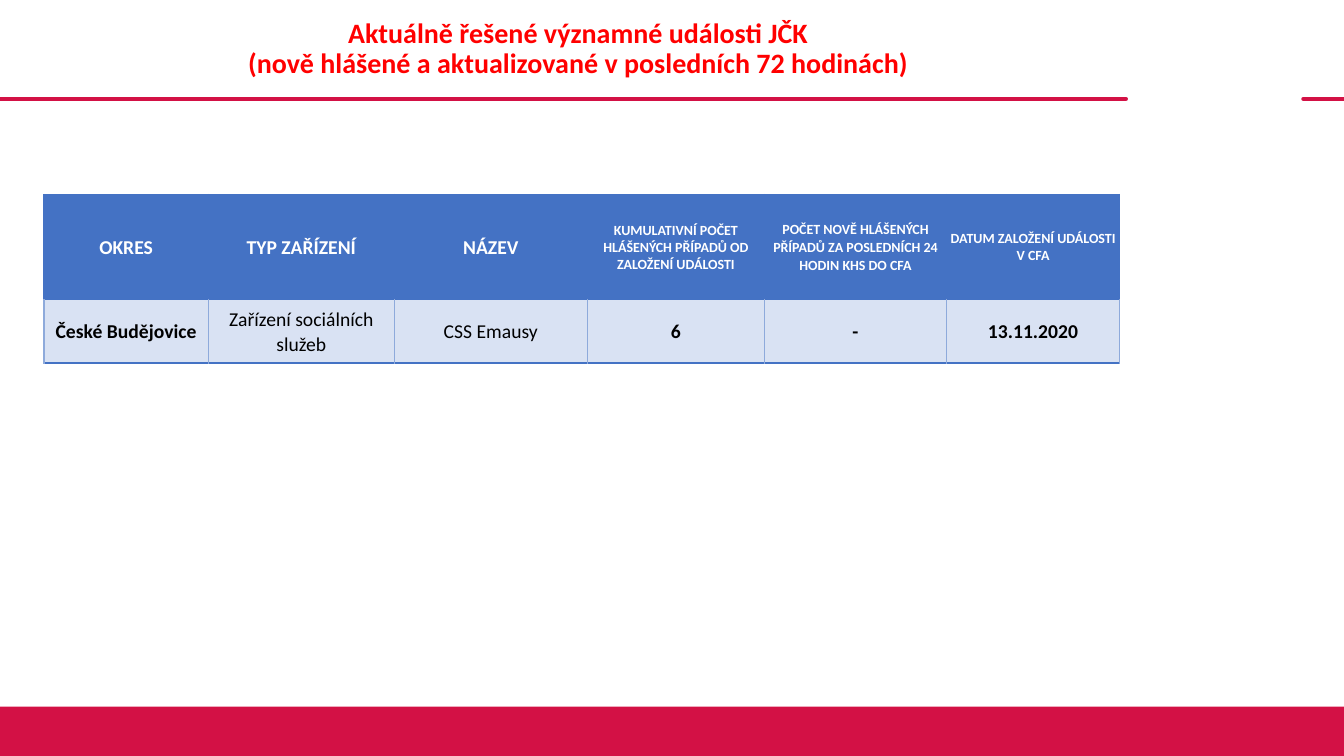
import pptx
import pptx.util
import pptx.dml.color
import pptx.enum.shapes
import pptx.enum.text
import pptx.oxml
import pptx.oxml.ns
from pptx.util import Pt

# Content
TITLE = ["Aktuálně řešené významné události JČK",
         "(nově hlášené a aktualizované v posledních 72 hodinách)"]
# Heading, heading size, line spacing, column width, value, bold value
COLUMNS = [
    ("OKRES", 14, 1, 117.4, "České Budějovice", True),
    ("TYP ZAŘÍZENÍ", 14, 1, 133, "Zařízení sociálních služeb", False),
    ("NÁZEV", 14, 1, 137.7, "CSS Emausy", False),
    ("KUMULATIVNÍ POČET HLÁŠENÝCH PŘÍPADŮ OD ZALOŽENÍ UDÁLOSTI", 10, 1, 126.6, "6", True),
    ("POČET NOVĚ HLÁŠENÝCH PŘÍPADŮ ZA POSLEDNÍCH 24 HODIN KHS DO CFA", 10, 1.05, 130, "-", True),
    ("DATUM ZALOŽENÍ UDÁLOSTI V CFA", 10, 1, 123.8, "13.11.2020", True),
]
COLORS = {"crimson": "D31145", "title": "FF0000", "header": "4472C4", "body": "D9E2F3",
          "divider": "8EAADB", "white": "FFFFFF", "black": "000000"}
FONT = "Calibri"

# Layout
WIDTH, HEIGHT = 960, 540
RULE_Y = 70.6
RULES = [(0, 804.2), (931, WIDTH)]
FOOTER_HEIGHT = 35.3
TABLE_LEFT, TABLE_TOP = 31.4, 138.9
ROW_HEIGHTS = [75, 45.4]


def rgb(name):
    return pptx.dml.color.RGBColor.from_string(COLORS[name])


def add_run(paragraph, text, size, color, bold):
    run = paragraph.add_run()
    run.text = text
    run.font.name, run.font.size, run.font.bold = FONT, Pt(size), bold
    run.font.color.rgb = rgb(color)


def fill_cell(cell, text, size, color, bold, spacing, fill, sides, margins):
    cell.fill.solid()
    cell.fill.fore_color.rgb = rgb(fill)
    cell.vertical_anchor = pptx.enum.text.MSO_ANCHOR.MIDDLE
    horizontal, top = margins
    cell.margin_left = cell.margin_right = Pt(horizontal)
    cell.margin_top, cell.margin_bottom = Pt(top), 0
    paragraph = cell.text_frame.paragraphs[0]
    paragraph.alignment = pptx.enum.text.PP_ALIGN.CENTER
    paragraph.line_spacing = spacing
    add_run(paragraph, text, size, color, bold)
    # Borders come before the fill in the cell properties
    edges = {"lnL": sides, "lnR": sides, "lnT": "header", "lnB": "header"}
    for position, (edge, edge_color) in enumerate(edges.items()):
        cell._tc.get_or_add_tcPr().insert(position, pptx.oxml.parse_xml(
            f'<a:{edge} {pptx.oxml.ns.nsdecls("a")} w="{Pt(1)}"><a:solidFill>'
            f'<a:srgbClr val="{COLORS[edge_color]}"/></a:solidFill></a:{edge}>'))


deck = pptx.Presentation()
deck.slide_width, deck.slide_height = Pt(WIDTH), Pt(HEIGHT)
slide = deck.slides.add_slide(deck.slide_layouts[6])

# Rules under the title
for start, end in RULES:
    rule = slide.shapes.add_connector(pptx.enum.shapes.MSO_CONNECTOR.STRAIGHT,
                                      Pt(start), Pt(RULE_Y), Pt(end), Pt(RULE_Y))
    rule.line.color.rgb = rgb("crimson")
    rule.line.width = Pt(3)
    rule.line._get_or_add_ln().set("cap", "rnd")
    rule._element.spPr.append(pptx.oxml.parse_xml(
        f'<a:effectLst {pptx.oxml.ns.nsdecls("a")}/>'))

# Footer band
footer = slide.shapes.add_shape(pptx.enum.shapes.MSO_SHAPE.RECTANGLE, 0,
                                Pt(HEIGHT - FOOTER_HEIGHT), Pt(WIDTH), Pt(FOOTER_HEIGHT))
footer.shadow.inherit = False
footer.fill.solid()
footer.fill.fore_color.rgb = rgb("crimson")
footer.line.fill.background()

# Table of events
table_width = sum(column[3] for column in COLUMNS)
events = slide.shapes.add_table(2, len(COLUMNS), Pt(TABLE_LEFT), Pt(TABLE_TOP),
                                Pt(table_width), Pt(sum(ROW_HEIGHTS))).table
events.horz_banding = False
for row, height in zip(events.rows, ROW_HEIGHTS):
    row.height = Pt(height)
for index, (heading, size, spacing, width, value, bold) in enumerate(COLUMNS):
    events.columns[index].width = Pt(width)
    fill_cell(events.cell(0, index), heading, size, "white", True, spacing,
              "header", "header", (0.7, 0.7))
    fill_cell(events.cell(1, index), value, 14, "black", bold, 1.07,
              "body", "divider", (5, 0))

# Title
title = slide.shapes.add_textbox(Pt(24), 0, Pt(778), Pt(RULE_Y)).text_frame
title.word_wrap = True
title.vertical_anchor = pptx.enum.text.MSO_ANCHOR.MIDDLE
title_lines = title.paragraphs[0]
title_lines.alignment = pptx.enum.text.PP_ALIGN.CENTER
title_lines.line_spacing = 0.9
for index, line in enumerate(TITLE):
    if index:
        title_lines.add_line_break()
    add_run(title_lines, line, 20, "title", True)

deck.save("out.pptx")
